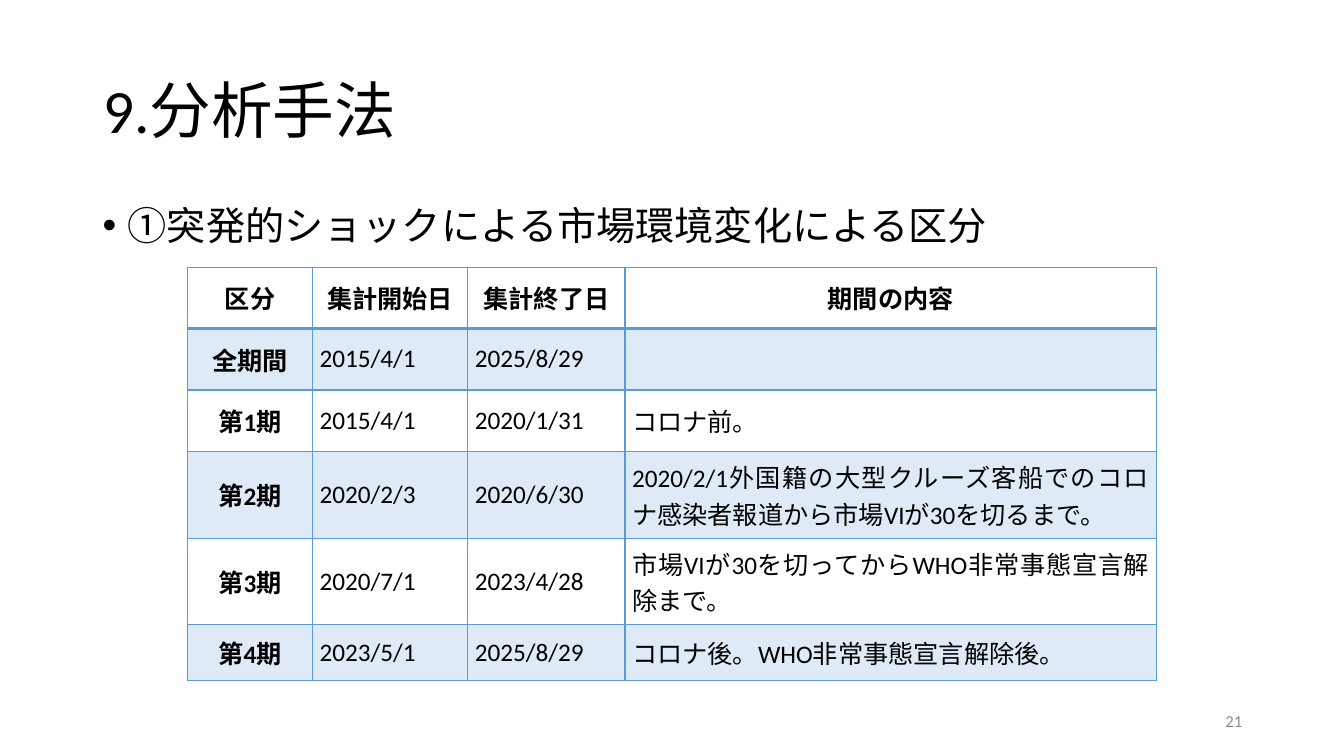
from lxml import etree
from pptx import Presentation
from pptx.dml.color import RGBColor
from pptx.enum.text import MSO_ANCHOR, MSO_AUTO_SIZE, PP_ALIGN
from pptx.oxml.ns import qn
from pptx.util import Inches, Pt

MIDDLE = MSO_ANCHOR.MIDDLE
NO_FIT = MSO_AUTO_SIZE.NONE
LEFT, CENTER, RIGHT, JUSTIFY = PP_ALIGN.LEFT, PP_ALIGN.CENTER, PP_ALIGN.RIGHT, PP_ALIGN.JUSTIFY
TITLE_ONLY = 5
FONT = "Calibri"
COLORS = {"text": "000000", "number": "8C8C8C", "rule": "5B9BD5", "band": "DEEBF7"}

COLUMN_WIDTHS = [1.24, 1.54, 1.56, 5.27]
ROW_HEIGHTS = [0.61, 0.61, 0.61, 0.86, 0.86, 0.55]
PERIODS = [
    ["区分", "集計開始日", "集計終了日", "期間の内容"],
    ["全期間", "2015/4/1", "2025/8/29", ""],
    ["第1期", "2015/4/1", "2020/1/31", "コロナ前。"],
    ["第2期", "2020/2/3", "2020/6/30",
     "2020/2/1外国籍の大型クルーズ客船でのコロナ感染者報道から市場VIが30を切るまで。"],
    ["第3期", "2020/7/1", "2023/4/28", "市場VIが30を切ってからWHO非常事態宣言解除まで。"],
    ["第4期", "2023/5/1", "2025/8/29", "コロナ後。WHO非常事態宣言解除後。"],
]


def style_paragraph(para, size, align, color="text", bold=False):
    para.alignment = align
    para.font.name = FONT
    para.font.size = Pt(size)
    para.font.bold = bold
    para.font.color.rgb = RGBColor.from_string(COLORS[color])


def add_text(page, left, top, width, height, text):
    box = page.shapes.add_textbox(Inches(left), Inches(top), Inches(width), Inches(height))
    frame = box.text_frame
    frame.word_wrap = True
    frame.text = text
    return frame


def place_title(page, left, top, width, height):
    title = page.shapes.title
    title.left, title.top = Inches(left), Inches(top)
    title.width, title.height = Inches(width), Inches(height)
    frame = title.text_frame
    frame.text = "9.分析手法"
    frame.auto_size = NO_FIT
    frame.vertical_anchor = MIDDLE
    para = frame.paragraphs[0]
    para.line_spacing = 0.9
    style_paragraph(para, 44, LEFT)


def add_body(page, left, top, width, height):
    frame = add_text(page, left, top, width, height, "①突発的ショックによる市場環境変化による区分")
    para = frame.paragraphs[0]
    para.line_spacing = 0.9
    properties = para._p.get_or_add_pPr()
    properties.set("marL", str(Inches(0.25)))
    properties.set("indent", str(-Inches(0.25)))
    etree.SubElement(properties, qn("a:buFont"), typeface="Arial")
    etree.SubElement(properties, qn("a:buChar"), char="•")
    style_paragraph(para, 28, LEFT)


def add_number(page, left, top, width, height):
    frame = add_text(page, left, top, width, height, "21")
    frame.vertical_anchor = MIDDLE
    style_paragraph(frame.paragraphs[0], 12, RIGHT, "number")


def set_borders(cell, row):
    properties = cell._tc.get_or_add_tcPr()
    widths = {"a:lnL": 1, "a:lnR": 1, "a:lnT": 2 if row == 1 else 1, "a:lnB": 2 if row == 0 else 1}
    for side, width in widths.items():
        line = etree.SubElement(properties, qn(side), w=str(Pt(width)))
        fill = etree.SubElement(line, qn("a:solidFill"))
        etree.SubElement(fill, qn("a:srgbClr"), val=COLORS["rule"])


def format_cell(cell, row, column, text):
    cell.margin_left = cell.margin_right = Inches(0.07)
    cell.margin_top = cell.margin_bottom = 0
    cell.vertical_anchor = MIDDLE
    cell.text = text
    heading = row == 0 or column == 0
    style_paragraph(cell.text_frame.paragraphs[0], 18, CENTER if heading else JUSTIFY, bold=heading)
    set_borders(cell, row)
    if row % 2:
        cell.fill.solid()
        cell.fill.fore_color.rgb = RGBColor.from_string(COLORS["band"])
    else:
        cell.fill.background()


def add_periods(page, left, top):
    frame = page.shapes.add_table(
        len(PERIODS), len(COLUMN_WIDTHS), Inches(left), Inches(top),
        Inches(sum(COLUMN_WIDTHS)), Inches(sum(ROW_HEIGHTS)))
    table = frame.table
    for column, width in zip(table.columns, COLUMN_WIDTHS):
        column.width = Inches(width)
    for row, height in zip(table.rows, ROW_HEIGHTS):
        row.height = Inches(height)
    for row, texts in enumerate(PERIODS):
        for column, text in enumerate(texts):
            format_cell(table.cell(row, column), row, column, text)


def main():
    deck = Presentation()
    deck.slide_width, deck.slide_height = Inches(13.33), Inches(7.5)
    page = deck.slides.add_slide(deck.slide_layouts[TITLE_ONLY])
    place_title(page, 0.92, 0.4, 11.5, 1.45)
    add_body(page, 0.92, 2, 11.5, 4.76)
    add_number(page, 9.42, 6.95, 3, 0.4)
    add_periods(page, 1.86, 2.65)
    deck.save("out.pptx")


if __name__ == "__main__":
    main()
